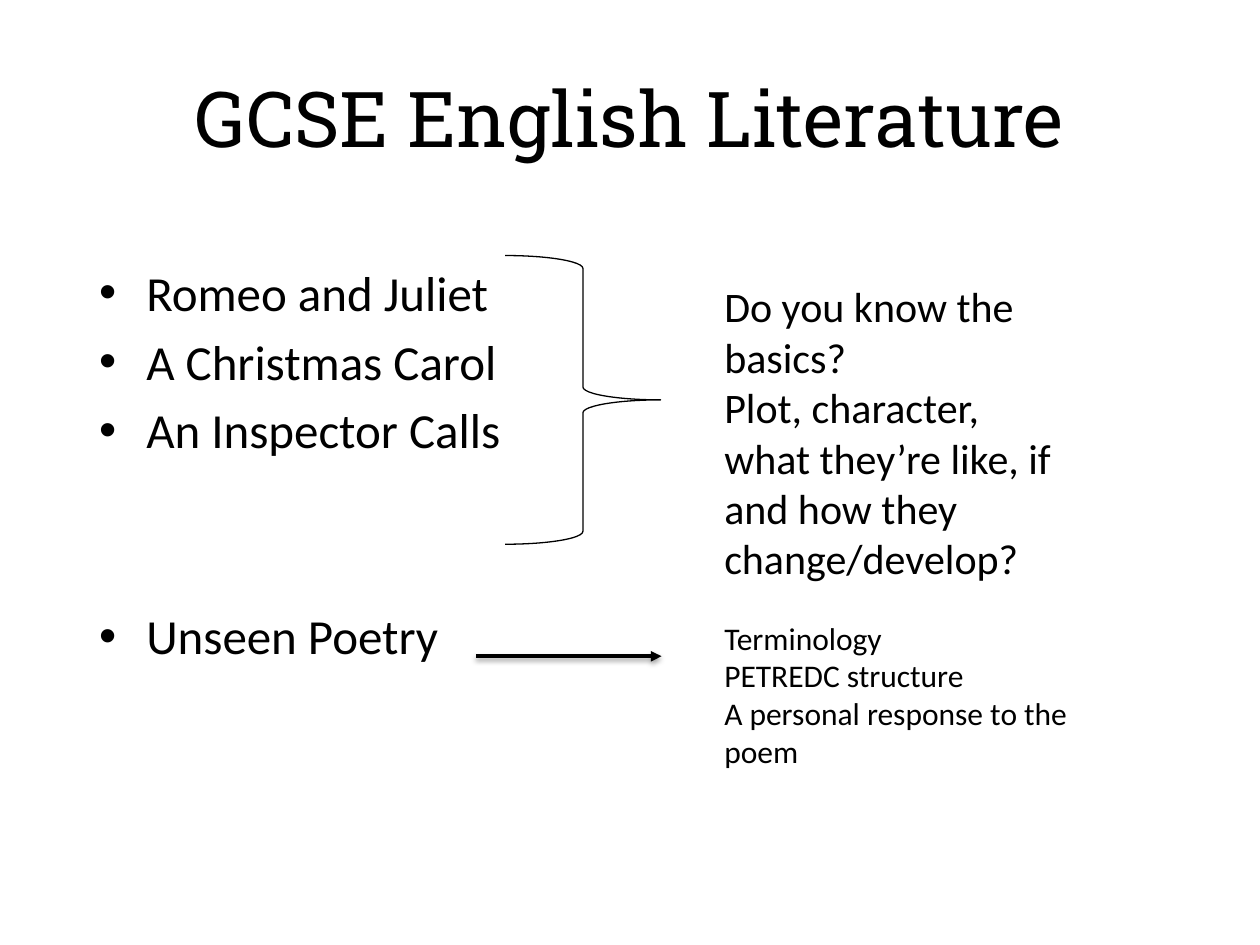
from lxml.etree import SubElement
from pptx import Presentation
from pptx.dml.color import RGBColor
from pptx.enum.shapes import MSO_CONNECTOR, MSO_SHAPE
from pptx.enum.text import MSO_ANCHOR, PP_ALIGN
from pptx.oxml.ns import qn
from pptx.util import Pt

TITLE = "GCSE English Literature"
SET_TEXTS = ["Romeo and Juliet", "A Christmas Carol", "An Inspector Calls"]
POETRY = "Unseen Poetry"
BASICS = [
    "Do you know the basics?",
    "Plot, character, what they’re like, if and how they change/develop?",
]
POETRY_SKILLS = ["Terminology", "PETREDC structure", "A personal response to the poem"]

COLORS = {"ink": "000000"}
INK = RGBColor.from_string(COLORS["ink"])
TITLE_FONT, BODY_FONT = "Roboto Slab", "Calibri"
INDENT = 27
BULLET_GAP, POETRY_GAP = 5.6, 84
NOTES_LEFT = 406.8


def add_span(para, text, size, font=BODY_FONT):
    span = para.add_run()
    span.text = text
    span.font.name = font
    span.font.size = Pt(size)
    span.font.color.rgb = INK


def add_text(page, area, lines, size, bulleted=False):
    box = page.shapes.add_textbox(*map(Pt, area))
    frame = box.text_frame
    frame.word_wrap = True
    for number, (text, gap) in enumerate(lines):
        para = frame.add_paragraph() if number else frame.paragraphs[0]
        para.space_before = Pt(gap)
        if bulleted:
            settings = para._p.get_or_add_pPr()
            settings.set("marL", str(Pt(INDENT)))
            settings.set("indent", str(Pt(-INDENT)))
            SubElement(settings, qn("a:buFont"), typeface="Arial")
            SubElement(settings, qn("a:buChar"), char="•")
        add_span(para, text, size)


def add_arrow(page, start, end):
    arrow = page.shapes.add_connector(MSO_CONNECTOR.STRAIGHT, *map(Pt, start + end))
    arrow.line.color.rgb = INK
    arrow.line.width = Pt(2)
    SubElement(arrow.line._get_or_add_ln(), qn("a:tailEnd"), type="triangle")
    effects = SubElement(arrow._element.spPr, qn("a:effectLst"))
    shadow = SubElement(
        effects, qn("a:outerShdw"), blurRad=str(Pt(3.1)), dist=str(Pt(1.6)),
        dir="5400000", rotWithShape="0",
    )
    tint = SubElement(shadow, qn("a:srgbClr"), val=COLORS["ink"])
    SubElement(tint, qn("a:alpha"), val="38000")


def main():
    deck = Presentation()
    deck.slide_width, deck.slide_height = Pt(720), Pt(540)
    page = deck.slides.add_slide(deck.slide_layouts[5])

    title = page.shapes.title
    title.left, title.top, title.width, title.height = map(Pt, (36, 21.6, 648, 90))
    title.text_frame.vertical_anchor = MSO_ANCHOR.MIDDLE
    heading = title.text_frame.paragraphs[0]
    heading.alignment = PP_ALIGN.CENTER
    add_span(heading, TITLE, 44, TITLE_FONT)

    topics = [(text, BULLET_GAP if number else 0) for number, text in enumerate(SET_TEXTS)]
    topics.append((POETRY, POETRY_GAP))
    add_text(page, (49.5, 146.5, 328.5, 342.5), topics, 28, bulleted=True)

    brace = page.shapes.add_shape(MSO_SHAPE.RIGHT_BRACE, *map(Pt, (288.7, 146, 88.8, 165)))
    brace.shadow.inherit = False
    brace.fill.background()
    brace.line.color.rgb = INK
    brace.line.width = Pt(0.75)

    add_text(page, (NOTES_LEFT, 157, 211.7, 182), [(text, 0) for text in BASICS], 24)
    add_arrow(page, (272, 375), (378, 375))
    add_text(page, (NOTES_LEFT, 350, 247, 94.5), [(text, 0) for text in POETRY_SKILLS], 18)

    deck.save("out.pptx")


if __name__ == "__main__":
    main()
